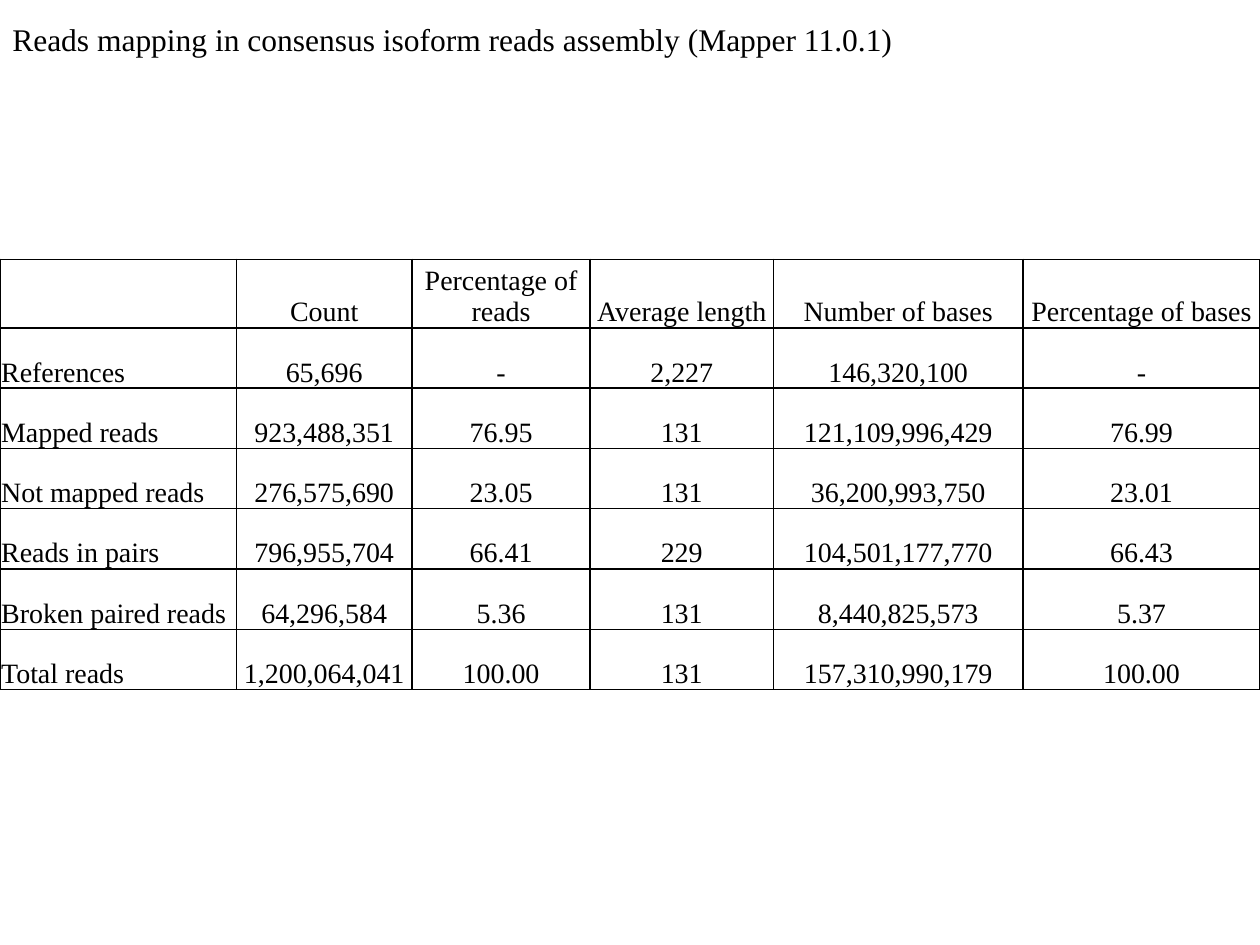
from dataclasses import dataclass

from lxml.etree import SubElement
from pptx import Presentation
from pptx.dml.color import RGBColor
from pptx.enum.text import MSO_ANCHOR, MSO_AUTO_SIZE, PP_ALIGN
from pptx.oxml.ns import qn
from pptx.util import Pt

COLORS = {"ink": "000000"}
FONT = "Times New Roman"
WIDTHS = [135.1, 100.3, 101.9, 104.6, 142.8, 135.3]
HEAD_H, ROW_H = 39.2, 34.45
HEADS = ["", "Count", "Percentage of reads", "Average length",
         "Number of bases", "Percentage of bases"]


@dataclass
class Reads:
    label: str
    count: str
    share: str
    length: str
    bases: str
    base_share: str

    def cells(self) -> list[str]:
        return [self.label, self.count, self.share,
                self.length, self.bases, self.base_share]


ROWS = [
    Reads("References", "65,696", "-", "2,227", "146,320,100", "-"),
    Reads("Mapped reads", "923,488,351", "76.95", "131", "121,109,996,429", "76.99"),
    Reads("Not mapped reads", "276,575,690", "23.05", "131", "36,200,993,750", "23.01"),
    Reads("Reads in pairs", "796,955,704", "66.41", "229", "104,501,177,770", "66.43"),
    Reads("Broken paired reads", "64,296,584", "5.36", "131", "8,440,825,573", "5.37"),
    Reads("Total reads", "1,200,064,041", "100.00", "131", "157,310,990,179", "100.00"),
]


def add_run(para, text: str, size: float) -> None:
    run = para.add_run()
    run.text = text
    run.font.name = FONT
    run.font.size = Pt(size)
    run.font.bold = False
    run.font.color.rgb = RGBColor.from_string(COLORS["ink"])


def add_edges(cell) -> None:
    """Draw a thin line on all four sides of a cell."""
    props = cell._tc.get_or_add_tcPr()
    for side in ("a:lnL", "a:lnR", "a:lnT", "a:lnB"):
        line = SubElement(props, qn(side), w=str(Pt(1)))
        fill = SubElement(line, qn("a:solidFill"))
        SubElement(fill, qn("a:srgbClr"), val=COLORS["ink"])


def fill_cell(cell, text: str, align: PP_ALIGN) -> None:
    cell.margin_left = cell.margin_right = cell.margin_top = Pt(0.7)
    cell.margin_bottom = Pt(0)
    cell.vertical_anchor = MSO_ANCHOR.BOTTOM
    add_edges(cell)
    cell.fill.background()
    para = cell.text_frame.paragraphs[0]
    para.alignment = align
    if text:
        add_run(para, text, 16)


def add_grid(slide) -> None:
    data = [HEADS] + [row.cells() for row in ROWS]
    height = HEAD_H + ROW_H * len(ROWS)
    table = slide.shapes.add_table(len(data), len(HEADS), Pt(0), Pt(148.2),
                                   Pt(sum(WIDTHS)), Pt(height)).table
    table.first_row = table.horz_banding = False
    for col, width in zip(table.columns, WIDTHS):
        col.width = Pt(width)
    for r, texts in enumerate(data):
        table.rows[r].height = Pt(ROW_H if r else HEAD_H)
        for c, text in enumerate(texts):
            align = PP_ALIGN.CENTER if c else PP_ALIGN.LEFT
            fill_cell(table.cell(r, c), text, align)


def add_title(slide, text: str) -> None:
    frame = slide.shapes.add_textbox(Pt(0), Pt(8), Pt(720), Pt(29)).text_frame
    frame.word_wrap = True
    frame.auto_size = MSO_AUTO_SIZE.SHAPE_TO_FIT_TEXT
    add_run(frame.paragraphs[0], text, 18)


def main() -> None:
    deck = Presentation()
    deck.slide_width, deck.slide_height = Pt(720), Pt(540)
    slide = deck.slides.add_slide(deck.slide_layouts[6])

    # Mapping statistics
    add_grid(slide)

    # Title, with generic terms for the method and the tool
    add_title(slide, "Reads mapping in consensus isoform reads assembly (Mapper 11.0.1)")

    deck.save("out.pptx")


if __name__ == "__main__":
    main()
